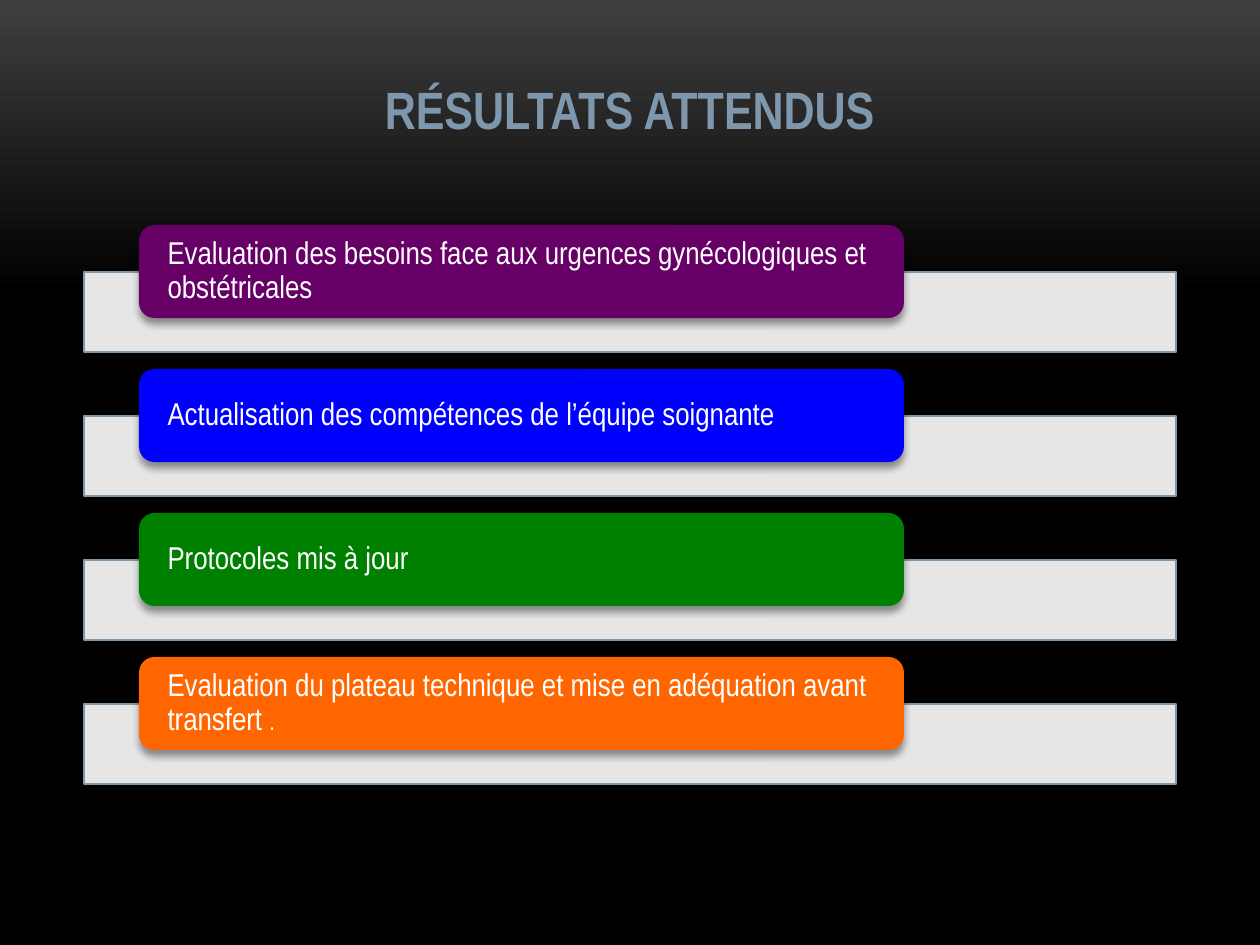
from lxml.etree import SubElement
from pptx import Presentation
from pptx.dml.color import RGBColor
from pptx.enum.shapes import MSO_SHAPE as Shape
from pptx.enum.text import MSO_ANCHOR as Anchor, MSO_AUTO_SIZE as AutoSize, PP_ALIGN as Align
from pptx.oxml.ns import qn
from pptx.util import Emu, Pt

EMU_PER_INCH = 914400
PX_PER_INCH = 126
FONT = "Arial Narrow"

BLACK = RGBColor(0x00, 0x00, 0x00)
CHARCOAL = RGBColor(0x3F, 0x3F, 0x3F)
WHITE = RGBColor(0xFF, 0xFF, 0xFF)
STEEL = RGBColor(0x7E, 0x97, 0xAD)
PURPLE = RGBColor(0x66, 0x00, 0x66)
BLUE = RGBColor(0x00, 0x00, 0xFF)
GREEN = RGBColor(0x00, 0x80, 0x00)
ORANGE = RGBColor(0xFF, 0x66, 0x00)

MARGIN, CONTENT_WIDTH = 84, 1092
FIRST_CARD_TOP, ROW_PITCH = 225, 144
CARD_LEFT, CARD_WIDTH, CARD_HEIGHT = 139, 765, 93
BAR_OFFSET, BAR_HEIGHT = 47, 80

# Each result: card colour, then its runs as (text, size)
RESULTS = [
    (PURPLE, [("Evaluation des besoins face aux urgences gynécologiques et obstétricales", 18)]),
    (BLUE, [("Actualisation des compétences de l’équipe soignante", 18)]),
    (GREEN, [("Protocoles mis à jour", 18)]),
    (ORANGE, [("Evaluation du plateau technique et mise en adéquation avant transfert ", 18),
              (".", 14)]),
]


def px(length):
    return Emu(round(length * EMU_PER_INCH / PX_PER_INCH))


def write_text(frame, runs, *, color, align, anchor, bold=False, line_spacing=1.0,
               inset_x=13, inset_y=6):
    frame.word_wrap = True
    frame.auto_size = AutoSize.NONE
    frame.vertical_anchor = anchor
    frame.margin_left = frame.margin_right = px(inset_x)
    frame.margin_top = frame.margin_bottom = px(inset_y)
    paragraph = frame.paragraphs[0]
    paragraph.alignment = align
    paragraph.line_spacing = line_spacing
    for text, size in runs:
        run = paragraph.add_run()
        run.text = text
        run.font.name = FONT
        run.font.size = Pt(size)
        run.font.bold = bold
        run.font.color.rgb = color


def add_block(slide, kind, left, top, width, height, color):
    block = slide.shapes.add_shape(kind, px(left), px(top), px(width), px(height))
    block.shadow.inherit = False
    block.fill.solid()
    block.fill.fore_color.rgb = color
    return block


def set_alpha(color_element, percent):
    SubElement(color_element, qn("a:alpha"), val=str(percent * 1000))


def add_drop_shadow(block):
    effects = block._element.spPr.find(qn("a:effectLst"))
    shadow = SubElement(effects, qn("a:outerShdw"), blurRad=str(Pt(4)), dist=str(Pt(3.4)),
                        dir="5400000", rotWithShape="0")
    set_alpha(SubElement(shadow, qn("a:srgbClr"), val=str(BLACK)), 40)


def add_bar(slide, top):
    bar = add_block(slide, Shape.RECTANGLE, MARGIN, top, CONTENT_WIDTH, BAR_HEIGHT, WHITE)
    set_alpha(bar._element.spPr.find(qn("a:solidFill")).find(qn("a:srgbClr")), 90)
    bar.line.color.rgb = STEEL
    bar.line.width = Pt(0.75)


def add_card(slide, top, color, runs):
    card = add_block(slide, Shape.ROUNDED_RECTANGLE, CARD_LEFT, top,
                     CARD_WIDTH, CARD_HEIGHT, color)
    card.line.fill.background()
    add_drop_shadow(card)
    write_text(card.text_frame, runs, color=WHITE, align=Align.LEFT, anchor=Anchor.MIDDLE,
               line_spacing=0.9, inset_x=24, inset_y=0)


def paint_background(slide):
    fill = slide.background.fill
    fill.gradient()
    fill.gradient_angle = 270
    for stop, color, position in zip(fill.gradient_stops, (CHARCOAL, BLACK), (0, 0.31)):
        stop.color.rgb = color
        stop.position = position


def set_title(slide, text):
    title = slide.shapes.title
    title.left, title.top = px(MARGIN), px(38)
    title.width, title.height = px(CONTENT_WIDTH), px(108)
    write_text(title.text_frame, [(text, 30)], color=STEEL, align=Align.CENTER,
               anchor=Anchor.BOTTOM, bold=True)


def main():
    deck = Presentation()
    deck.slide_width, deck.slide_height = px(1260), px(945)
    slide = deck.slides.add_slide(deck.slide_layouts[5])
    paint_background(slide)
    set_title(slide, "RÉSULTATS ATTENDUS")
    for row, (color, runs) in enumerate(RESULTS):
        card_top = FIRST_CARD_TOP + row * ROW_PITCH
        add_bar(slide, card_top + BAR_OFFSET)
        add_card(slide, card_top, color, runs)
    deck.save("out.pptx")


if __name__ == "__main__":
    main()
